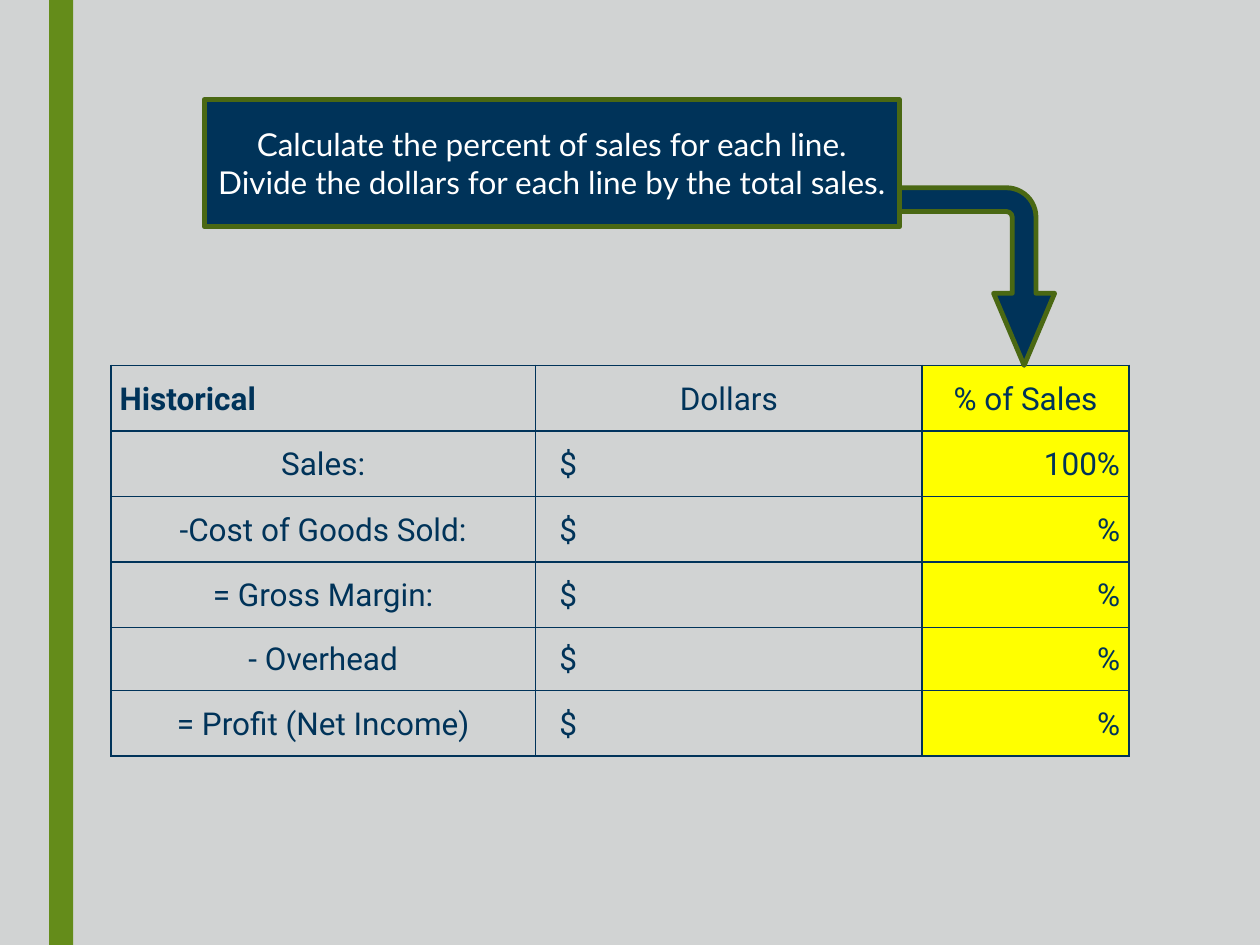
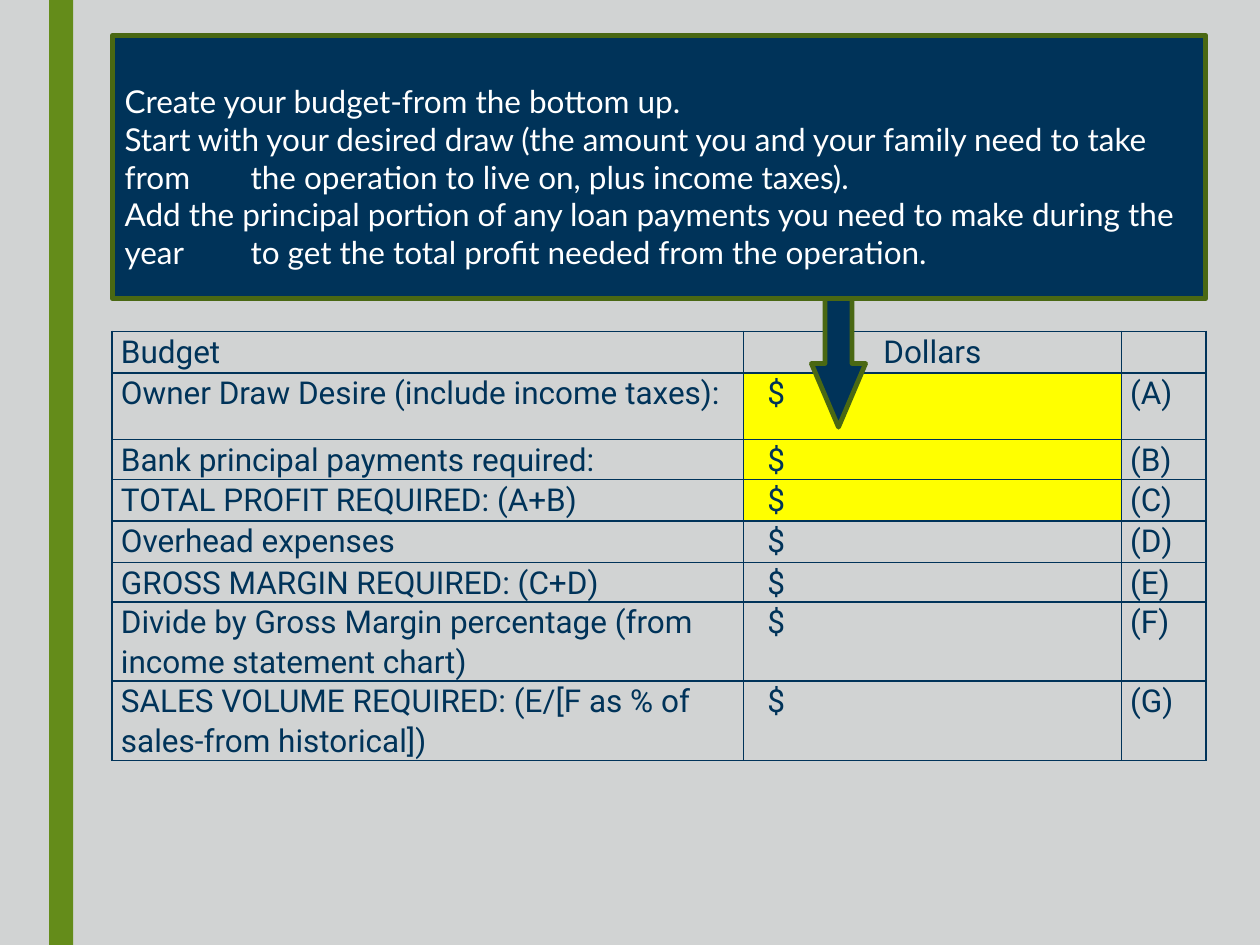
from lxml import etree
from pptx import Presentation
from pptx import util as u
from pptx.dml.color import RGBColor
from pptx.enum import shapes, text
from pptx.oxml import ns

COLORS = {
    "background": "D1D3D3",
    "band": "648C1A",
    "navy": "003359",
    "outline": "4A6813",
    "highlight": "FFFF00",
    "white": "FFFFFF",
}
LEFT, CENTER, RIGHT = text.PP_ALIGN.LEFT, text.PP_ALIGN.CENTER, text.PP_ALIGN.RIGHT

presentation = Presentation()
presentation.slide_width, presentation.slide_height = u.Inches(10), u.Inches(7.5)

# Grid: 100 columns by 75 rows
COLUMN = presentation.slide_width / 100
ROW = presentation.slide_height / 75


def write(frame, content, font="Lato", color="white", align=LEFT, bold=False, spacing=1.0):
    """Write one paragraph per line of content."""
    for index, line in enumerate(content.split("\n")):
        paragraph = frame.add_paragraph() if index else frame.paragraphs[0]
        paragraph.alignment, paragraph.line_spacing = align, spacing
        run = paragraph.add_run()
        run.text = line
        run.font.name, run.font.size, run.font.bold = font, u.Pt(18), bold
        run.font.color.rgb = RGBColor.from_string(COLORS[color])


def draw(slide, kind, left, top, width, height, fill="navy", line="outline"):
    """Draw a preset shape placed in grid columns and rows."""
    shape = slide.shapes.add_shape(
        kind, int(left * COLUMN), int(top * ROW), int(width * COLUMN), int(height * ROW))
    shape.shadow.inherit = False
    shape.fill.solid()
    shape.fill.fore_color.rgb = RGBColor.from_string(COLORS[fill])
    if line:
        shape.line.color.rgb = RGBColor.from_string(COLORS[line])
        shape.line.width = u.Pt(2.75)
    else:
        shape.line.fill.background()
    return shape


blank = presentation.slide_layouts[6]
historical_slide = presentation.slides.add_slide(blank)
budget_slide = presentation.slides.add_slide(blank)

# Shared background and green band, held by the master
master = presentation.slide_master
master.background.fill.solid()
master.background.fill.fore_color.rgb = RGBColor.from_string(COLORS["background"])
band = draw(historical_slide, shapes.MSO_SHAPE.RECTANGLE, 3.9, 0, 1.9, 75, "band", None)
band.element.nvSpPr.cNvPr.set("id", "100")
master.shapes.element.insert(2, band.element)

# Table contents
historical_rows = [("Historical", "Dollars", "% of Sales"), ("Sales:", "$", "100%")]
historical_rows += [(label, "$", "%") for label in (
    "-Cost of Goods Sold:", "= Gross Margin:", "- Overhead", "= Profit (Net Income)")]

budget_labels = [
    "Owner Draw Desire (include income taxes):",
    "Bank principal payments required:",
    "TOTAL PROFIT REQUIRED: (A+B)",
    "Overhead expenses",
    "GROSS MARGIN REQUIRED: (C+D)",
    "Divide by Gross Margin percentage (from income statement chart)",
    "SALES VOLUME REQUIRED: (E/[F as % of sales-from historical])",
]
budget_rows = [("Budget", "Dollars", "")]
budget_rows += [(label, "$", f"({letter})") for label, letter in zip(budget_labels, "ABCDEFG")]

tables = [
    dict(slide=historical_slide, rows=historical_rows, left=8.8, top=29,
         widths=[33.7, 30.7, 16.4], heights=[5.2, 5.2, 5.2, 5.2, 5, 5.2],
         aligns=[CENTER, LEFT, RIGHT], anchor=text.MSO_ANCHOR.MIDDLE, bold_title=True,
         highlighted={(row, 2) for row in range(6)}),
    dict(slide=budget_slide, rows=budget_rows, left=8.9, top=26.3,
         widths=[50.1, 30, 6.7], heights=[3.3, 5.3, 3.1, 3.3, 3.3, 3.1, 5.2, 5.2],
         aligns=[LEFT, LEFT, LEFT], anchor=text.MSO_ANCHOR.TOP, bold_title=False,
         highlighted={(row, 1) for row in (1, 2, 3)}),
]

# Tables
for item in tables:
    table = item["slide"].shapes.add_table(
        len(item["rows"]), 3, int(item["left"] * COLUMN), int(item["top"] * ROW),
        int(sum(item["widths"]) * COLUMN), int(sum(item["heights"]) * ROW)).table
    table.first_row = table.horz_banding = False
    for column, width in zip(table.columns, item["widths"]):
        column.width = int(width * COLUMN)
    for row, height in zip(table.rows, item["heights"]):
        row.height = int(height * ROW)

    for row_index, values in enumerate(item["rows"]):
        for column_index, value in enumerate(values):
            cell = table.cell(row_index, column_index)
            cell.vertical_anchor = item["anchor"]
            cell.margin_left = u.Inches(0.19 if value == "$" else 0.07)
            cell.margin_right = u.Inches(0.07)
            cell.margin_top = cell.margin_bottom = 0

            # Borders come before the fill
            properties = cell._tc.get_or_add_tcPr()
            for side in ("lnL", "lnR", "lnT", "lnB"):
                border = etree.SubElement(properties, ns.qn(f"a:{side}"), w=str(u.Pt(1)))
                solid = etree.SubElement(border, ns.qn("a:solidFill"))
                etree.SubElement(solid, ns.qn("a:srgbClr"), val=COLORS["navy"])
            if (row_index, column_index) in item["highlighted"]:
                cell.fill.solid()
                cell.fill.fore_color.rgb = RGBColor.from_string(COLORS["highlight"])
            else:
                cell.fill.background()

            is_title = row_index == 0 and column_index == 0
            align = item["aligns"][column_index]
            if row_index == 0:
                align = LEFT if is_title else CENTER
            write(cell.text_frame, value, font="Roboto", color="navy", align=align,
                  bold=is_title and item["bold_title"], spacing=1.07)

# Arrows from the callouts to the tables
bent_arrow = draw(historical_slide, shapes.MSO_SHAPE.BENT_ARROW, 68.5, 13.8, 14.1, 16.3)
bent_arrow.rotation = 90
down_arrow = draw(budget_slide, shapes.MSO_SHAPE.DOWN_ARROW, 64.4, 15, 4.3, 18.9)
for arrow, adjustments in ((bent_arrow, (0.134, 0.172, 0.406, 0.166)),
                           (down_arrow, (0.5, 1.174))):
    for index, adjustment in enumerate(adjustments):
        arrow.adjustments[index] = adjustment

# Callouts
percent_callout = draw(historical_slide, shapes.MSO_SHAPE.RECTANGLE, 16.2, 7.9, 55.2, 10.1)
budget_callout = draw(budget_slide, shapes.MSO_SHAPE.RECTANGLE, 8.9, 2.8, 86.8, 20.9)
for callout, align, content in (
    (percent_callout, CENTER,
     "Calculate the percent of sales for each line.\n"
     "Divide the dollars for each line by the total sales."),
    (budget_callout, LEFT,
     "Create your budget-from the bottom up.\n"
     "Start with your desired draw (the amount you and your family need to take from "
     "\tthe operation to live on, plus income taxes).\n"
     "Add the principal portion of any loan payments you need to make during the year "
     "\tto get the total profit needed from the operation."),
):
    callout.text_frame.word_wrap = True
    callout.text_frame.vertical_anchor = text.MSO_ANCHOR.MIDDLE
    write(callout.text_frame, content, align=align)
budget_callout.text_frame.paragraphs[0].line_spacing = 1.5

presentation.save("out.pptx")
